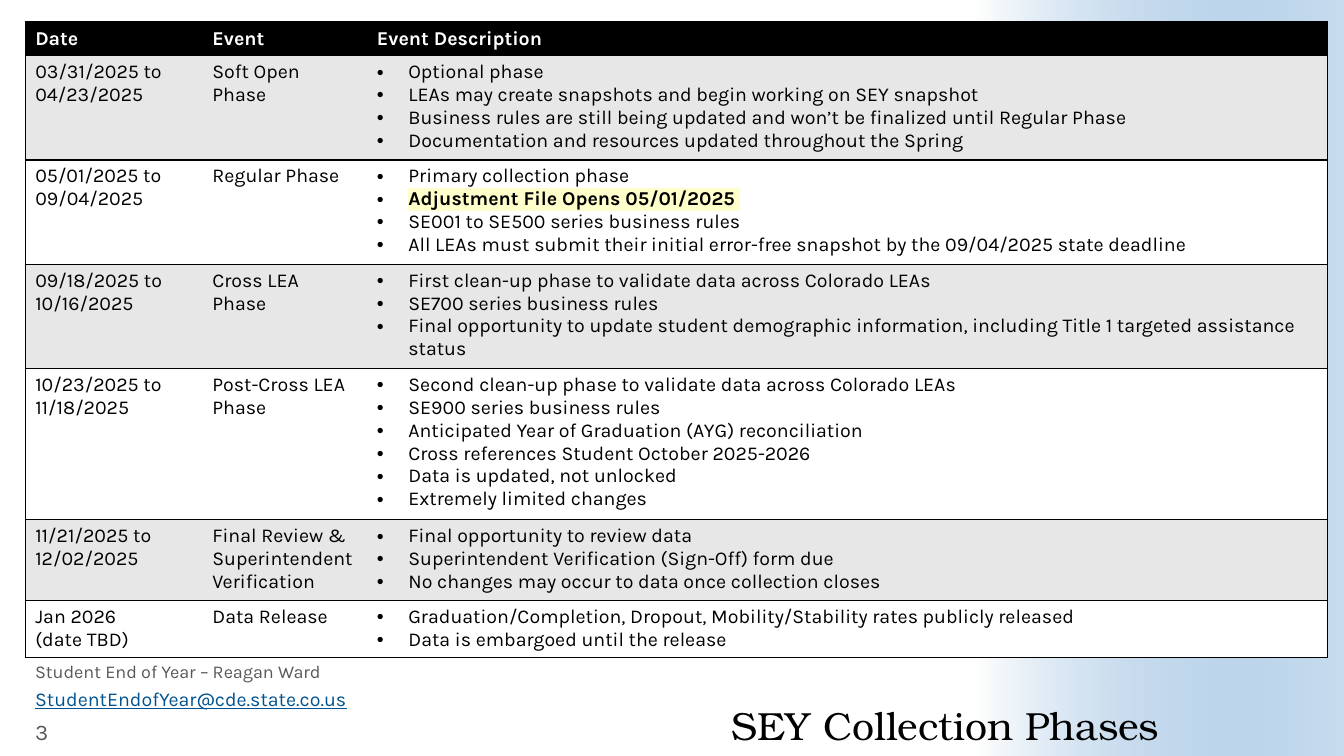
from lxml import etree
from pptx import Presentation
from pptx.dml.color import RGBColor
from pptx.enum.shapes import MSO_SHAPE
from pptx.enum.text import MSO_ANCHOR, PP_ALIGN
from pptx.oxml.ns import qn
from pptx.util import Pt

RECT = MSO_SHAPE.RECTANGLE
BOTTOM = MSO_ANCHOR.BOTTOM
MIDDLE = MSO_ANCHOR.MIDDLE
LEFT = PP_ALIGN.LEFT
RIGHT = PP_ALIGN.RIGHT

BLACK = "000000"
WHITE = "FFFFFF"
SHADE = "E7E7E7"
GRAY = "595959"
BLUE = "005390"
YELLOW = "FFFFCC"
SANS = "Karla"
SERIF = "TeX Gyre Bonum"
DEADLINE = "Adjustment File Opens 05/01/2025"

WIDTHS = [126.5, 117.5, 686.5]
LINES = [1, 4, 4, 4, 6, 3, 2]
HEADER = ["Date", "Event", "Event Description"]
PHASES = [
    ("03/31/2025 to 04/23/2025", "Soft Open Phase", [
        "Optional phase",
        "LEAs may create snapshots and begin working on SEY snapshot",
        "Business rules are still being updated and won’t be finalized until Regular Phase",
        "Documentation and resources updated throughout the Spring"]),
    ("05/01/2025 to 09/04/2025", "Regular Phase", [
        "Primary collection phase",
        DEADLINE,
        "SE001 to SE500 series business rules",
        "All LEAs must submit their initial error-free snapshot by the 09/04/2025 state deadline"]),
    ("09/18/2025 to 10/16/2025", "Cross LEA Phase", [
        "First clean-up phase to validate data across Colorado LEAs",
        "SE700 series business rules",
        "Final opportunity to update student demographic information, "
        "including Title 1 targeted assistance status"]),
    ("10/23/2025 to 11/18/2025", "Post-Cross LEA Phase", [
        "Second clean-up phase to validate data across Colorado LEAs",
        "SE900 series business rules",
        "Anticipated Year of Graduation (AYG) reconciliation",
        "Cross references Student October 2025-2026",
        "Data is updated, not unlocked",
        "Extremely limited changes"]),
    ("11/21/2025 to 12/02/2025", "Final Review & Superintendent Verification", [
        "Final opportunity to review data",
        "Superintendent Verification (Sign-Off) form due",
        "No changes may occur to data once collection closes"]),
    ("Jan 2026\n(date TBD)", "Data Release", [
        "Graduation/Completion, Dropout, Mobility/Stability rates publicly released",
        "Data is embargoed until the release"]),
]


def color(code):
    return RGBColor.from_string(code)


def add_run(para, text, size=14, code=BLACK, face=SANS, bold=False, line=False, mark=None):
    run = para.add_run()
    run.text = text
    font = run.font
    font.size = Pt(size)
    font.bold = bold
    font.underline = line
    font.color.rgb = color(code)
    font.name = face
    if mark:
        light = etree.Element(qn("a:highlight"))
        etree.SubElement(light, qn("a:srgbClr"), val=mark)
        run._r.rPr.find(qn("a:solidFill")).addnext(light)


def add_label(slide, box, text, anchor, space=1.0, align=LEFT, inset=True, **style):
    frame = slide.shapes.add_textbox(*map(Pt, box)).text_frame
    frame.word_wrap = True
    frame.vertical_anchor = anchor
    if not inset:
        frame.margin_left = frame.margin_right = 0
        frame.margin_top = frame.margin_bottom = 0
    para = frame.paragraphs[0]
    para.alignment = align
    para.line_spacing = space
    add_run(para, text, **style)


def add_band(slide):
    band = slide.shapes.add_shape(RECT, Pt(558.25), Pt(138.25), Pt(540), Pt(263.5))
    band.rotation = 270
    band.shadow.inherit = False
    band.line.fill.background()
    band.fill.gradient()
    band.fill.gradient_angle = 270
    for stop, code, place in zip(band.fill.gradient_stops, (WHITE, "488BC9"), (0, 1)):
        stop.color.rgb = color(code)
        stop.position = place
    last = band._element.spPr.findall(".//" + qn("a:srgbClr"))[-1]
    etree.SubElement(last, qn("a:alpha"), val="30000")


def add_edges(cell, sides):
    props = cell._tc.get_or_add_tcPr()
    for spot, side in enumerate("LRTB"):
        edge = etree.Element(qn("a:ln" + side), w=str(Pt(1)))
        if side in sides:
            fill = etree.SubElement(edge, qn("a:solidFill"))
            etree.SubElement(fill, qn("a:srgbClr"), val=BLACK)
        else:
            etree.SubElement(edge, qn("a:noFill"))
        props.insert(spot, edge)


def add_bullet(para):
    props = para._p.get_or_add_pPr()
    props.set("marL", str(Pt(22.5)))
    props.set("indent", str(-Pt(22.5)))
    etree.SubElement(props, qn("a:buFont"), typeface="Arial")
    etree.SubElement(props, qn("a:buChar"), char="•")


def fill_text(cell, text, **style):
    para = cell.text_frame.paragraphs[0]
    for spot, part in enumerate(text.split("\n")):
        if spot:
            para.add_line_break()
        add_run(para, part, **style)


def fill_list(cell, items):
    frame = cell.text_frame
    for spot, item in enumerate(items):
        para = frame.add_paragraph() if spot else frame.paragraphs[0]
        add_bullet(para)
        if item == DEADLINE:
            add_run(para, item, bold=True, mark=YELLOW)
            add_run(para, " ", mark=YELLOW)
        else:
            add_run(para, item)


def add_grid(slide):
    highs = [7 + 16.3 * count for count in LINES]
    frame = slide.shapes.add_table(len(LINES), len(WIDTHS), Pt(18), Pt(15.75),
                                   Pt(sum(WIDTHS)), Pt(sum(highs)))
    table = frame.table
    table.first_row = False
    table.horz_banding = False
    for column, width in zip(table.columns, WIDTHS):
        column.width = Pt(width)
    for row, high in zip(table.rows, highs):
        row.height = Pt(high)
    for down, texts in enumerate([HEADER] + PHASES):
        for across, text in enumerate(texts):
            cell = table.cell(down, across)
            cell.fill.solid()
            shade = SHADE if down % 2 else WHITE
            cell.fill.fore_color.rgb = color(shade if down else BLACK)
            add_edges(cell, ("LTB", "TB", "RTB")[across])
            if down == 0:
                fill_text(cell, text, code=WHITE, bold=True)
            elif across == 2:
                fill_list(cell, text)
            else:
                fill_text(cell, text)


def main():
    deck = Presentation()
    deck.slide_width = Pt(960)
    deck.slide_height = Pt(540)
    slide = deck.slides.add_slide(deck.slide_layouts[6])
    add_band(slide)
    add_label(slide, (306.5, 464.5, 521.5, 70.5), "SEY Collection Phases", BOTTOM,
              space=0.9, align=RIGHT, inset=False, size=28, face=SERIF)
    add_grid(slide)
    add_label(slide, (18, 471.5, 280, 19), "Student End of Year – Reagan Ward", BOTTOM,
              space=0.7, size=12.9, code=GRAY)
    add_label(slide, (18, 489, 280, 22), "StudentEndofYear@cde.state.co.us", BOTTOM,
              space=0.8, code=BLUE, line=True)
    add_label(slide, (18, 511, 61, 22.5), "3", MIDDLE, size=16, code=GRAY)
    deck.save("out.pptx")


if __name__ == "__main__":
    main()
